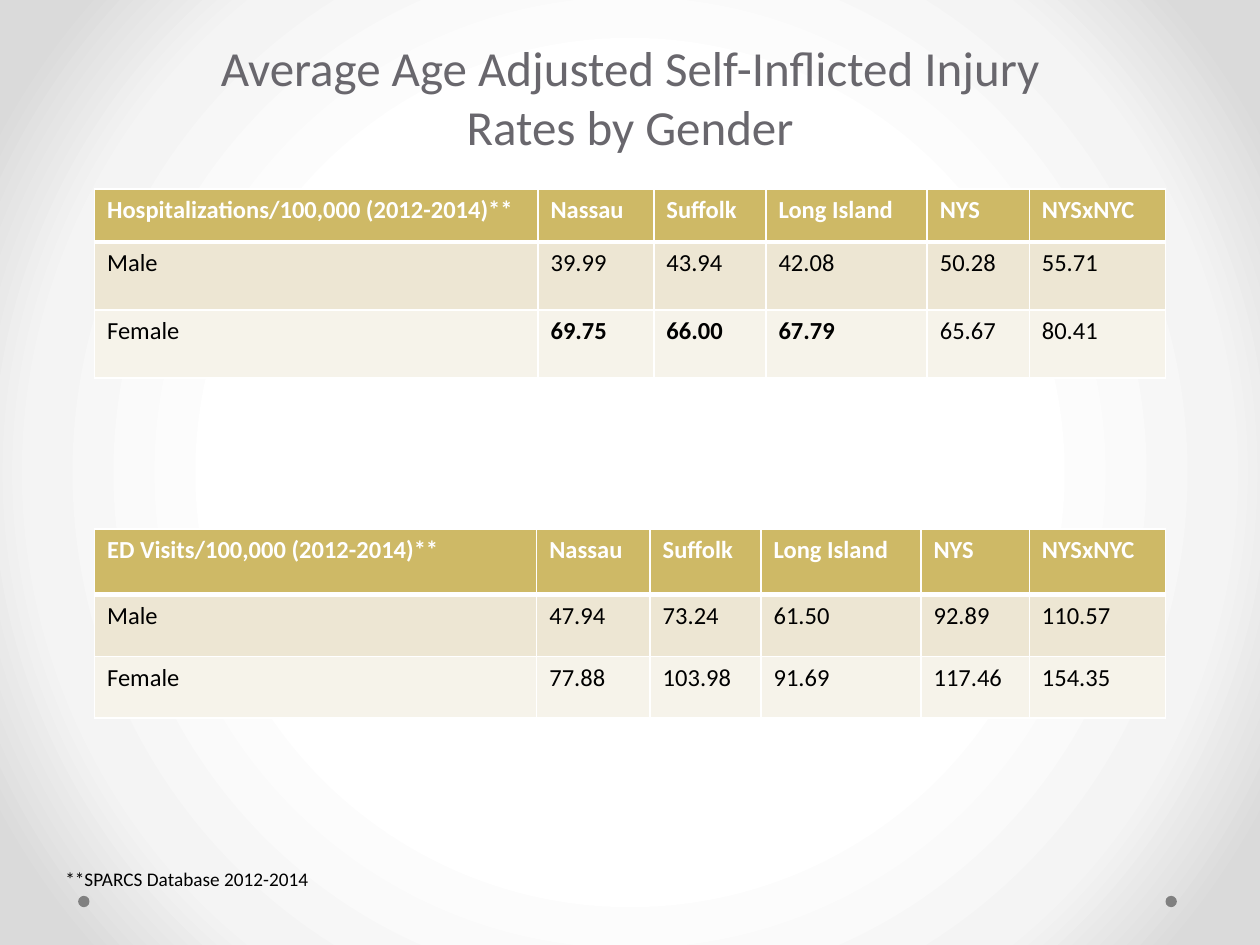
from dataclasses import dataclass

from pptx import Presentation
from pptx.dml.color import RGBColor
from pptx.enum.shapes import MSO_SHAPE
from pptx.enum.text import MSO_AUTO_SIZE, PP_ALIGN
from pptx.oxml import parse_xml
from pptx.oxml.ns import nsdecls, qn
from pptx.util import Inches, Pt


@dataclass(frozen=True)
class Theme:
    font: str = "Calibri"
    title_size: int = 28
    table_size: int = 14
    note_size: int = 11
    title: str = "69676D"
    text: str = "000000"
    white: str = "FFFFFF"
    dot: str = "808080"
    header: str = "CEB966"
    bands: tuple[str, ...] = ("EDE6D3", "F6F3EA")
    backdrop: tuple[tuple[int, str], ...] = (
        (50, "FFFFFF"), (76, "F4F4F4"), (92, "DADADA"))


@dataclass(frozen=True)
class RateTable:
    measure: str
    top: float
    columns: tuple[float, ...]
    rows: tuple[float, ...]
    male: tuple[str, ...]
    female: tuple[str, ...]
    bold: tuple[str, ...] = ()


THEME = Theme()
REGIONS = ("Nassau", "Suffolk", "Long Island", "NYS", "NYSxNYC")
RATE_TABLES = (
    RateTable("ED Visits/100,000 (2012-2014)**", 4.2,
              (3.51, 0.9, 0.88, 1.27, 0.86, 1.08), (0.52, 0.49, 0.49),
              ("47.94", "73.24", "61.50", "92.89", "110.57"),
              ("77.88", "103.98", "91.69", "117.46", "154.35")),
    RateTable("Hospitalizations/100,000 (2012-2014)**", 1.5,
              (3.52, 0.92, 0.89, 1.28, 0.81, 1.08), (0.42, 0.54, 0.54),
              ("39.99", "43.94", "42.08", "50.28", "55.71"),
              ("69.75", "66.00", "67.79", "65.67", "80.41"),
              bold=("69.75", "66.00", "67.79")),
)


def style_text(frame, size: int, color: str, bold: bool = False,
               align=PP_ALIGN.LEFT) -> None:
    for paragraph in frame.paragraphs:
        paragraph.alignment = align
        for run in paragraph.runs:
            run.font.name = THEME.font
            run.font.size = Pt(size)
            run.font.bold = bold
            run.font.color.rgb = RGBColor.from_string(color)


def paint_backdrop(slide) -> None:
    slide.background.fill.gradient()
    gradient = slide.element.find(".//" + qn("a:gradFill"))
    stops = "".join(
        f'<a:gs pos="{position * 1000}"><a:srgbClr val="{color}"/></a:gs>'
        for position, color in THEME.backdrop)
    radial = parse_xml(
        f'<a:gradFill {nsdecls("a")} rotWithShape="1"><a:gsLst>{stops}</a:gsLst>'
        '<a:path path="circle"><a:fillToRect l="50000" t="50000" r="50000" '
        'b="50000"/></a:path></a:gradFill>')
    gradient.getparent().replace(gradient, radial)


def add_dot(slide, left: float) -> None:
    dot = slide.shapes.add_shape(MSO_SHAPE.OVAL, Inches(left), Inches(7.11),
                                 Inches(0.09), Inches(0.09))
    dot.shadow.inherit = False
    dot.fill.solid()
    dot.fill.fore_color.rgb = RGBColor.from_string(THEME.dot)
    dot.line.fill.background()


def add_text(slide, text: str, box: tuple[float, ...], size: int, color: str,
             align=PP_ALIGN.LEFT) -> None:
    frame = slide.shapes.add_textbox(*map(Inches, box)).text_frame
    frame.text = text
    frame.word_wrap = False
    frame.auto_size = MSO_AUTO_SIZE.SHAPE_TO_FIT_TEXT
    style_text(frame, size, color, align=align)


def set_borders(cell, row: int) -> None:
    """White rules all round, with a heavy one below the header."""
    widths = {"L": 1, "R": 1, "T": 3 if row == 1 else 1, "B": 3 if row == 0 else 1}
    properties = cell._tc.get_or_add_tcPr()
    for index, (side, width) in enumerate(widths.items()):
        properties.insert(index, parse_xml(
            f'<a:ln{side} {nsdecls("a")} w="{Pt(width)}"><a:solidFill>'
            f'<a:srgbClr val="{THEME.white}"/></a:solidFill></a:ln{side}>'))


def add_rate_table(slide, rates: RateTable) -> None:
    lines = ((rates.measure, *REGIONS),
             ("Male", *rates.male), ("Female", *rates.female))
    table = slide.shapes.add_table(
        len(lines), len(rates.columns), Inches(0.75), Inches(rates.top),
        Inches(sum(rates.columns)), Inches(sum(rates.rows))).table
    for column, width in zip(table.columns, rates.columns):
        column.width = Inches(width)
    for table_row, height in zip(table.rows, rates.rows):
        table_row.height = Inches(height)

    fills = (THEME.header, *THEME.bands)
    for row, line in enumerate(lines):
        is_header = row == 0
        for column, value in enumerate(line):
            cell = table.cell(row, column)
            cell.text_frame.text = value
            style_text(cell.text_frame, THEME.table_size,
                       THEME.white if is_header else THEME.text,
                       bold=is_header or value in rates.bold)
            cell.fill.solid()
            cell.fill.fore_color.rgb = RGBColor.from_string(fills[row])
            set_borders(cell, row)


def main() -> None:
    deck = Presentation()
    deck.slide_width, deck.slide_height = Inches(10), Inches(7.5)
    slide = deck.slides.add_slide(deck.slide_layouts[6])

    # Backdrop with its two corner dots
    paint_backdrop(slide)
    for left in (9.25, 0.62):
        add_dot(slide, left)

    # Rates by gender
    for rates in RATE_TABLES:
        add_rate_table(slide, rates)

    # Source note and title
    add_text(slide, "**SPARCS Database 2012-2014", (0.42, 6.83, 2.16, 0.29),
             THEME.note_size, THEME.text)
    add_text(slide, "Average Age Adjusted Self-Inflicted Injury\nRates by Gender",
             (1.61, 0.25, 6.78, 1.04), THEME.title_size, THEME.title,
             PP_ALIGN.CENTER)

    deck.save("out.pptx")


if __name__ == "__main__":
    main()
